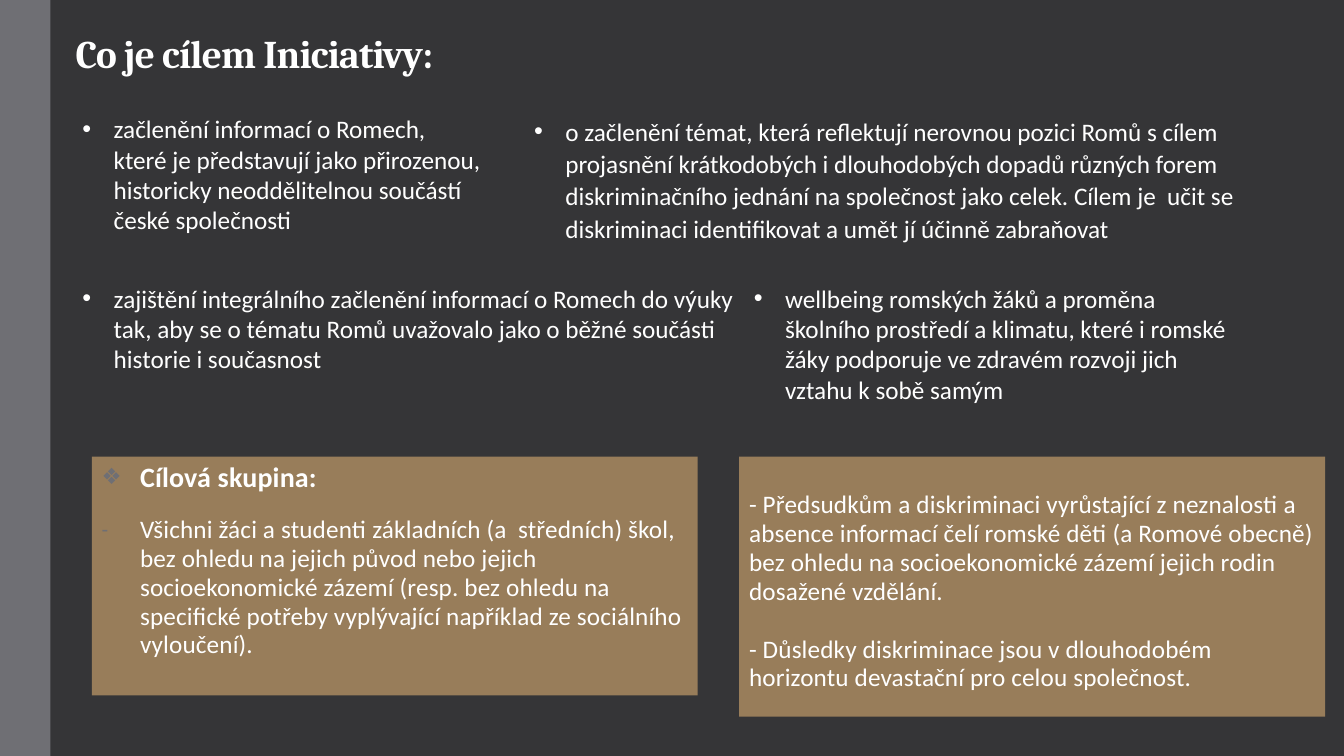
"""Build the slide on the goals and the target group of the initiative."""
from lxml.etree import SubElement
from pptx import Presentation
from pptx.dml.color import RGBColor
from pptx.enum.shapes import MSO_SHAPE
from pptx.enum.text import MSO_ANCHOR, PP_ALIGN
from pptx.oxml.ns import qn
from pptx.util import Inches, Pt

DARK = RGBColor(0x35, 0x35, 0x37)
GREY = RGBColor(0x6F, 0x6F, 0x74)
TAN = RGBColor(0x98, 0x7D, 0x5A)
WHITE = RGBColor(0xFF, 0xFF, 0xFF)

prs = Presentation()
prs.slide_width, prs.slide_height = Inches(13.33), Inches(7.5)
s = prs.slides.add_slide(prs.slide_layouts[6])
s.background.fill.solid()
s.background.fill.fore_color.rgb = DARK


def add_box(left, top, width, height, fill=None):
    """Add a text box or a filled panel, placed in percent of the slide."""
    x, w = (int(prs.slide_width * v / 100) for v in (left, width))
    y, h = (int(prs.slide_height * v / 100) for v in (top, height))
    if fill is None:
        sp = s.shapes.add_textbox(x, y, w, h)
    else:
        sp = s.shapes.add_shape(MSO_SHAPE.RECTANGLE, x, y, w, h)
        sp.shadow.inherit = False
        sp.fill.solid()
        sp.fill.fore_color.rgb = fill
        sp.line.fill.background()
    sp.text_frame.word_wrap = True
    sp.text_frame.vertical_anchor = MSO_ANCHOR.TOP
    return sp


def add_text(tf, text, size=18, font="Calibri", bold=False, spacing=1.0, before=0,
             after=0, track=0, bullet=None, indent=0.31, bullet_color=None):
    """Write one paragraph, filling the empty first one if there is one."""
    p = tf.paragraphs[-1] if not tf.paragraphs[-1].runs else tf.add_paragraph()
    p.alignment = PP_ALIGN.LEFT
    p.line_spacing = spacing
    p.space_before, p.space_after = Pt(before), Pt(after)
    r = p.add_run()
    r.text = text
    r.font.size, r.font.name, r.font.bold = Pt(size), font, bold
    r.font.color.rgb = WHITE
    r.font._element.set("spc", str(int(track * 100)))
    if bullet:
        pPr = p._p.get_or_add_pPr()
        pPr.set("marL", str(Inches(indent)))
        pPr.set("indent", str(-Inches(indent)))
        if bullet_color is not None:
            clr = SubElement(pPr, qn("a:buClr"))
            SubElement(clr, qn("a:srgbClr")).set("val", str(bullet_color))
            SubElement(pPr, qn("a:buSzPct")).set("val", "80000")
        SubElement(pPr, qn("a:buFont")).set("typeface", "Arial")
        SubElement(pPr, qn("a:buChar")).set("char", bullet)


add_box(0, 0, 3.75, 100, fill=GREY)

tf = add_box(4.88, 3.33, 91.75, 7.47).text_frame
tf.vertical_anchor = MSO_ANCHOR.BOTTOM
add_text(tf, "Co je cílem Iniciativy:", size=28, font="Cambria", bold=True,
         spacing=0.85, track=-0.5)

ROW_1, ROW_2 = 14.4, 36.8
goals = [
    (5.4, ROW_1, 31.2, 17.5, 1.0,
     "začlenění informací o Romech, které je představují jako přirozenou, "
     "historicky neoddělitelnou součástí české společnosti"),
    (39, ROW_1, 54, 18.7, 1.07,
     "o začlenění témat, která reflektují nerovnou pozici Romů s cílem projasnění "
     "krátkodobých i dlouhodobých dopadů různých forem diskriminačního jednání na "
     "společnost jako celek. Cílem je  učit se diskriminaci identifikovat a umět jí "
     "účinně zabraňovat"),
    (5.4, ROW_2, 50, 13.5, 1.0,
     "zajištění integrálního začlenění informací o Romech do výuky tak, aby se o tématu "
     "Romů uvažovalo jako o běžné součásti historie i současnost"),
    (55.35, ROW_2, 37.65, 17.5, 1.0,
     "wellbeing romských žáků a proměna školního prostředí a klimatu, které i romské "
     "žáky podporuje ve zdravém rozvoji jich vztahu k sobě samým"),
]
for left, top, width, height, spacing, text in goals:
    add_text(add_box(left, top, width, height).text_frame, text, spacing=spacing, bullet="•")

PANEL_TOP = 60.4
panel = dict(spacing=0.95, track=0.1)
listed = dict(panel, before=14, after=2, indent=0.38, bullet_color=GREY)

tf = add_box(6.83, PANEL_TOP, 45.08, 31.6, fill=TAN).text_frame
add_text(tf, "Cílová skupina:", size=20, bold=True, bullet="❖", **listed)
add_text(tf, "Všichni žáci a studenti základních (a  středních) škol, bez ohledu na jejich "
         "původ nebo jejich socioekonomické zázemí (resp. bez ohledu na specifické potřeby "
         "vyplývající například ze sociálního vyloučení).", bullet="-", **listed)

tf = add_box(55, PANEL_TOP, 43.6, 34.4, fill=TAN).text_frame
tf.margin_top = Inches(0.34)
add_text(tf, "- Předsudkům a diskriminaci vyrůstající z neznalosti a absence informací čelí "
         "romské děti (a Romové obecně) bez ohledu na socioekonomické zázemí jejich rodin "
         "dosažené vzdělání.", **panel)
add_text(tf, "- Důsledky diskriminace jsou v dlouhodobém horizontu devastační pro celou "
         "společnost.", before=21, **panel)

prs.save("out.pptx")
